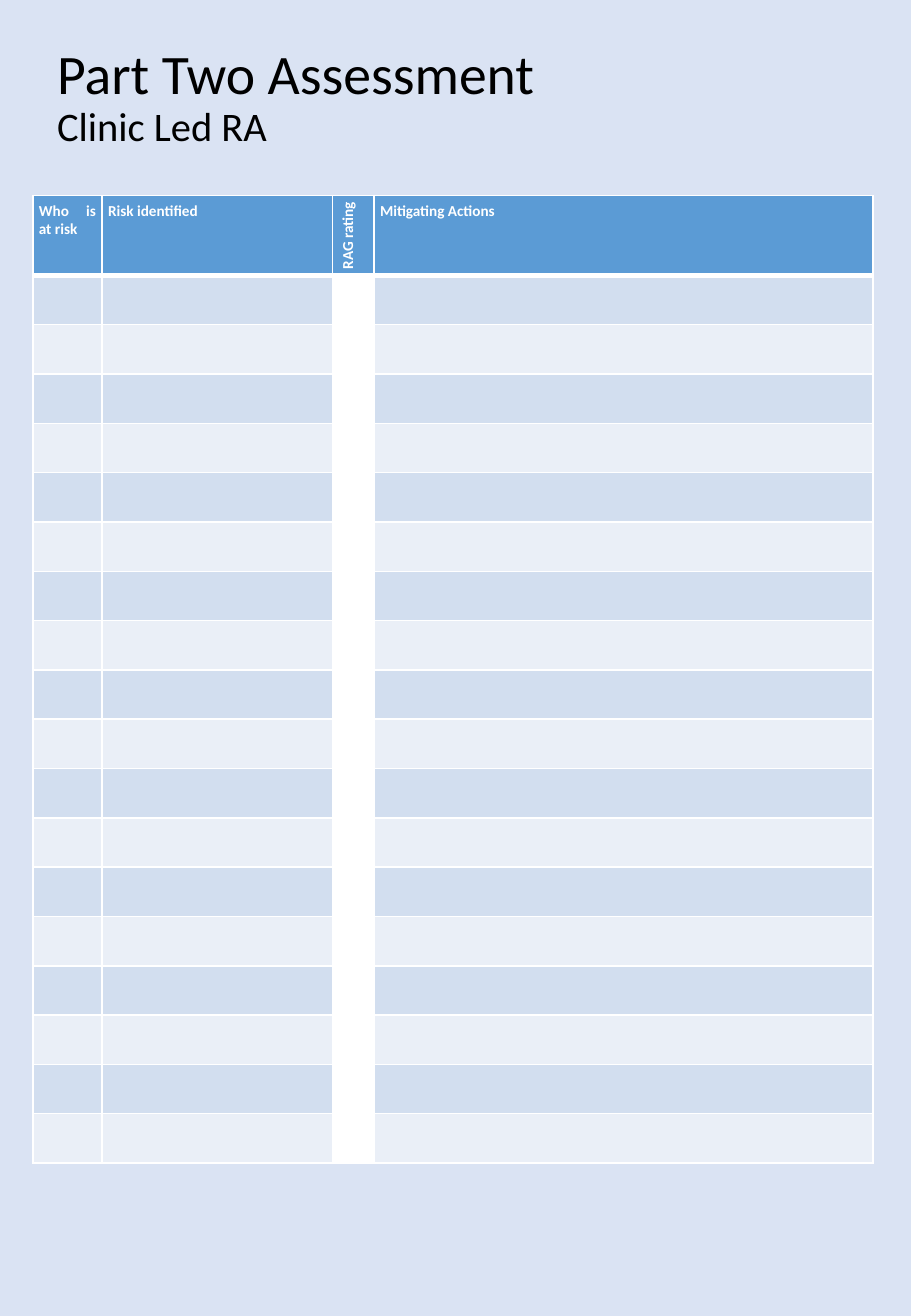
"""Build the Part Two Assessment slide: a title above a blank risk table."""
import dataclasses

import pptx
import pptx.dml.color
import pptx.enum.text
import pptx.oxml
import pptx.oxml.ns
import pptx.slide
import pptx.table
import pptx.util

RGBColor = pptx.dml.color.RGBColor
BACKGROUND = RGBColor(0xDA, 0xE3, 0xF3)
HEADER = RGBColor(0x5B, 0x9B, 0xD5)
BAND_DARK = RGBColor(0xD2, 0xDE, 0xEF)
BAND_LIGHT = RGBColor(0xEA, 0xEF, 0xF7)
WHITE = RGBColor(0xFF, 0xFF, 0xFF)
BLACK = RGBColor(0, 0, 0)
FONT = "Calibri"
WIDTH = pptx.util.Inches(7.5)
HEIGHT = pptx.util.Inches(10.83)
BODY_ROWS = 18
HEADER_SHARE = 6.0
ROW_SHARE = 3.75
THIN, THICK = 1, 3


@dataclasses.dataclass(frozen=True)
class Column:
    """One table column, its width a percentage of the slide's width."""
    heading: str
    share: float
    vertical: bool = False
    banded: bool = True


COLUMNS = [
    Column("Who is at risk", 7.6),
    Column("Risk identified", 25.33),
    Column("RAG rating", 4.53, vertical=True, banded=False),
    Column("Mitigating Actions", 54.8),
]


def across(share: float) -> int:
    """Return a percentage of the slide's width."""
    return round(WIDTH * share / 100)


def down(share: float) -> int:
    """Return a percentage of the slide's height."""
    return round(HEIGHT * share / 100)


def style_run(r, size: float, color: RGBColor, bold: bool = False) -> None:
    """Set the font of a run."""
    r.font.name = FONT
    r.font.size = pptx.util.Pt(size)
    r.font.bold = bold
    r.font.color.rgb = color


def paint_cell(cell: pptx.table._Cell, fill: RGBColor, top: int, bottom: int) -> None:
    """Fill a cell, set its insets and give it white borders."""
    cell.margin_left = cell.margin_right = pptx.util.Inches(0.05)
    cell.margin_top = cell.margin_bottom = pptx.util.Inches(0.05)
    cell.fill.solid()
    cell.fill.fore_color.rgb = fill
    tc_pr = cell._tc.get_or_add_tcPr()
    borders = {"lnL": THIN, "lnR": THIN, "lnT": top, "lnB": bottom}
    for i, (tag, points) in enumerate(borders.items()):
        tc_pr.insert(i, pptx.oxml.parse_xml(
            f'<a:{tag} {pptx.oxml.ns.nsdecls("a")} w="{pptx.util.Pt(points)}">'
            f'<a:solidFill><a:srgbClr val="{WHITE}"/></a:solidFill></a:{tag}>'))


def add_title(s: pptx.slide.Slide) -> None:
    """Place the two-line title in the title placeholder."""
    sp = s.shapes.title
    sp.left, sp.top = across(4.93), 0
    sp.width, sp.height = across(86.27), down(14.87)
    tf = sp.text_frame
    tf.text = "Part Two Assessment\vClinic Led RA"
    tf.auto_size = pptx.enum.text.MSO_AUTO_SIZE.NONE
    tf.vertical_anchor = pptx.enum.text.MSO_ANCHOR.MIDDLE
    p = tf.paragraphs[0]
    p.alignment = pptx.enum.text.PP_ALIGN.LEFT
    p.line_spacing = 0.9
    for r, size in zip(p.runs, (33, 24)):
        style_run(r, size, BLACK)


def fill_heading(cell: pptx.table._Cell, column: Column) -> None:
    """Write a column heading."""
    paint_cell(cell, HEADER, THIN, THICK)
    cell.text_frame.text = column.heading
    p = cell.text_frame.paragraphs[0]
    p.alignment = pptx.enum.text.PP_ALIGN.JUSTIFY
    style_run(p.runs[0], 9, WHITE, bold=True)
    if column.vertical:
        cell._tc.get_or_add_tcPr().set("vert", "vert270")


def add_risk_table(s: pptx.slide.Slide) -> None:
    """Add the risk table with its headings and banded blank rows."""
    table = s.shapes.add_table(
        BODY_ROWS + 1, len(COLUMNS), across(3.6), down(14.87),
        across(sum(column.share for column in COLUMNS)),
        down(HEADER_SHARE + BODY_ROWS * ROW_SHARE)).table
    for i, row in enumerate(table.rows):
        row.height = down(ROW_SHARE if i else HEADER_SHARE)
    for j, column in enumerate(COLUMNS):
        table.columns[j].width = across(column.share)
        fill_heading(table.cell(0, j), column)
        for i in range(1, BODY_ROWS + 1):
            band = BAND_DARK if i % 2 else BAND_LIGHT
            paint_cell(table.cell(i, j), band if column.banded else WHITE,
                       THICK if i == 1 else THIN, THIN)


def main() -> None:
    """Build and save the presentation."""
    prs = pptx.Presentation()
    prs.slide_width, prs.slide_height = WIDTH, HEIGHT
    s = prs.slides.add_slide(prs.slide_layouts[5])
    s.background.fill.solid()
    s.background.fill.fore_color.rgb = BACKGROUND
    add_title(s)
    add_risk_table(s)
    prs.save("out.pptx")


if __name__ == "__main__":
    main()
